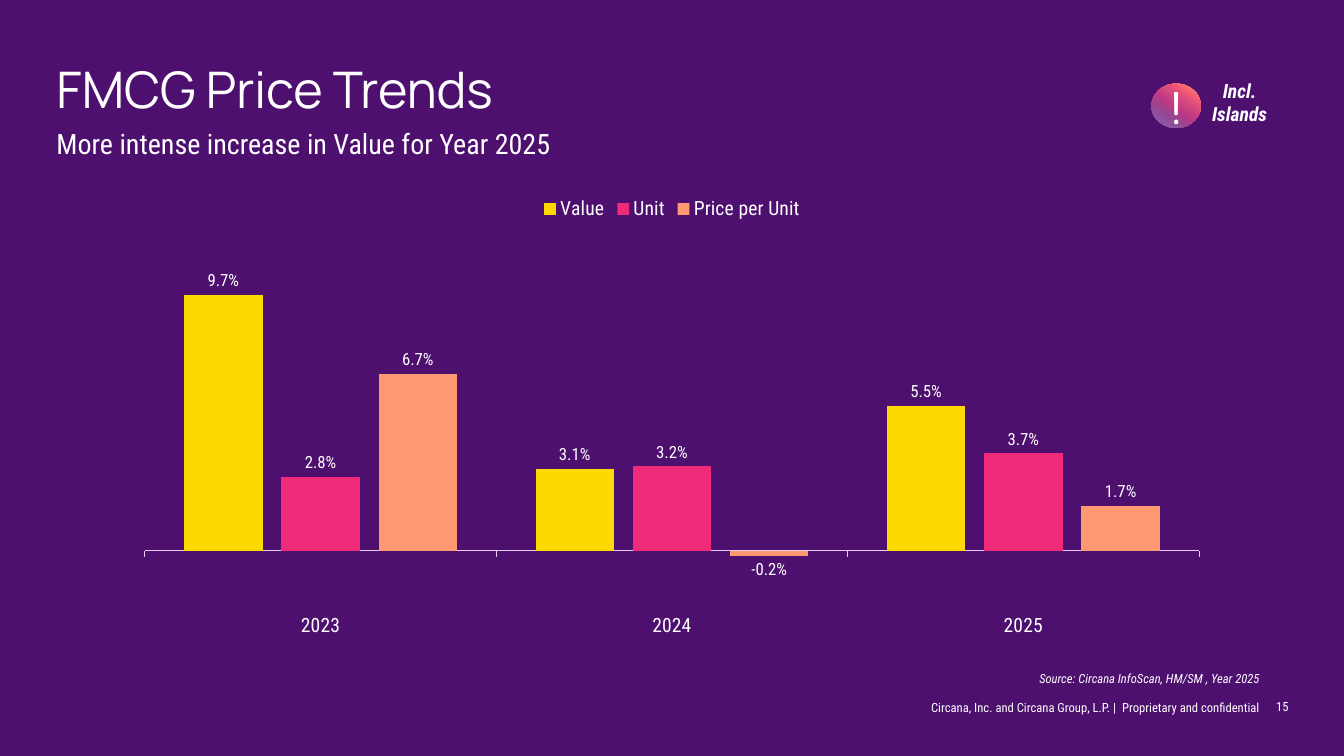
from lxml import etree
from pptx import Presentation
from pptx.chart.data import CategoryChartData
from pptx.dml.color import RGBColor
from pptx.enum.chart import XL_CHART_TYPE, XL_LEGEND_POSITION, XL_TICK_LABEL_POSITION, XL_TICK_MARK
from pptx.enum.shapes import MSO_SHAPE
from pptx.enum.text import MSO_ANCHOR, MSO_AUTO_SIZE, PP_ALIGN
from pptx.oxml.ns import qn
from pptx.util import Inches, Pt

LEFT, CENTER, RIGHT = PP_ALIGN.LEFT, PP_ALIGN.CENTER, PP_ALIGN.RIGHT
TOP, BOTTOM = MSO_ANCHOR.TOP, MSO_ANCHOR.BOTTOM
NO_AUTOFIT = MSO_AUTO_SIZE.NONE
OVAL = MSO_SHAPE.OVAL
CLUSTERED = XL_CHART_TYPE.COLUMN_CLUSTERED
LEGEND_TOP = XL_LEGEND_POSITION.TOP
LABELS_LOW = XL_TICK_LABEL_POSITION.LOW
TICK_OUT, TICK_NONE = XL_TICK_MARK.OUTSIDE, XL_TICK_MARK.NONE

PURPLE, WHITE, LILAC = "4E106F", "FFFFFF", "E9CDF8"
HEADING_FONT, BODY_FONT = "Manrope", "Roboto Condensed"
YEARS = ["2023", "2024", "2025"]
TRENDS = [
    ("Value", "FDD900", [0.097, 0.031, 0.055]),
    ("Unit", "EF2A79", [0.028, 0.032, 0.037]),
    ("Price per Unit", "FF9971", [0.067, -0.002, 0.017]),
]
BADGE_STOPS = [
    (5, "FF9971"), (21, "F75F75"), (35, "D94B7D"), (53, "BD3884"),
    (70, "964894"), (84, "8B57A8"), (95, "7A4C93"),
]


def color(hex_string):
    return RGBColor.from_string(hex_string)


def style_font(font, size, name=BODY_FONT, bold=False, italic=False):
    font.size = Pt(size)
    font.name = name
    font.bold = bold
    font.italic = italic
    font.color.rgb = color(WHITE)


def place(shape, left, top, width, height):
    shape.left, shape.top = Inches(left), Inches(top)
    shape.width, shape.height = Inches(width), Inches(height)


def write(shape, text, size, align=LEFT, anchor=TOP, inset=0, spacing=0.9, **font_format):
    frame = shape.text_frame
    frame.word_wrap = True
    frame.auto_size = NO_AUTOFIT
    frame.vertical_anchor = anchor
    frame.margin_left = frame.margin_right = Inches(inset)
    frame.margin_top = frame.margin_bottom = Inches(inset / 2)
    paragraph = frame.paragraphs[0]
    paragraph.text = text
    properties = paragraph._p.get_or_add_pPr()
    properties.set("marL", "0")
    properties.set("indent", "0")
    etree.SubElement(properties, qn("a:buNone"))
    paragraph.alignment = align
    paragraph.line_spacing = spacing
    paragraph.space_before = Pt(0)
    style_font(paragraph.runs[0].font, size, **font_format)


def fill_placeholder(placeholder, box, text, size, **text_format):
    place(placeholder, *box)
    write(placeholder, text, size, **text_format)


def add_text(slide, box, text, size, **text_format):
    label = slide.shapes.add_textbox(*map(Inches, box))
    write(label, text, size, **text_format)


def add_badge(slide, box):
    badge = slide.shapes.add_shape(OVAL, *map(Inches, box))
    badge.shadow.inherit = False
    badge.line.fill.background()
    badge.fill.gradient()
    badge.fill.gradient_angle = 360 - 124
    stop_list = badge._element.spPr.find(".//" + qn("a:gsLst"))
    for old_stop in list(stop_list):
        stop_list.remove(old_stop)
    for percent, hex_string in BADGE_STOPS:
        stop = etree.SubElement(stop_list, qn("a:gs"), pos=str(percent * 1000))
        etree.SubElement(stop, qn("a:srgbClr"), val=hex_string)


def add_trend_chart(slide, box):
    data = CategoryChartData(number_format="0.0%")
    data.categories = YEARS
    for name, _, values in TRENDS:
        data.add_series(name, values)
    chart = slide.shapes.add_chart(CLUSTERED, *map(Inches, box), data).chart
    style_font(chart.font, 12)
    chart.has_title = False
    chart.has_legend = True
    chart.legend.position = LEGEND_TOP
    chart.legend.include_in_layout = False
    style_font(chart.legend.font, 14)

    years_axis = chart.category_axis
    years_axis.tick_label_position = LABELS_LOW
    years_axis.major_tick_mark = TICK_OUT
    years_axis.minor_tick_mark = TICK_NONE
    years_axis.format.line.color.rgb = color(LILAC)
    years_axis.format.line.width = Pt(0.75)
    style_font(years_axis.tick_labels.font, 14)

    rate_axis = chart.value_axis
    rate_axis.visible = False
    rate_axis.has_major_gridlines = False
    rate_axis.minimum_scale, rate_axis.maximum_scale = -0.02, 0.12

    plot = chart.plots[0]
    plot.vary_by_categories = False
    plot.gap_width, plot.overlap = 100, -24
    for series, (_, hex_string, _) in zip(plot.series, TRENDS):
        series.invert_if_negative = False
        series.format.fill.solid()
        series.format.fill.fore_color.rgb = color(hex_string)
        labels = series.data_labels
        labels.show_value = True
        labels.number_format = "0.0%"
        labels.number_format_is_linked = False
        style_font(labels.font, 12)


def main():
    deck = Presentation()
    deck.slide_width, deck.slide_height = Inches(13.33), Inches(7.5)
    slide = deck.slides.add_slide(deck.slide_layouts[3])
    slide.background.fill.solid()
    slide.background.fill.fore_color.rgb = color(PURPLE)

    title, subtitle, source = slide.placeholders
    fill_placeholder(title, (0.56, 0.64, 12.23, 0.6), "FMCG Price Trends", 36, name=HEADING_FONT)
    fill_placeholder(subtitle, (0.56, 1.29, 12.23, 0.5),
                     "More intense increase in Value for Year 2025", 20)
    fill_placeholder(source, (7.14, 6.63, 5.35, 0.18),
                     "Source: Circana InfoScan, HM/SM , Year 2025", 9,
                     align=RIGHT, anchor=BOTTOM, italic=True)

    add_trend_chart(slide, (1.22, 1.84, 10.89, 4.58))

    add_badge(slide, (11.42, 0.83, 0.49, 0.44))
    add_text(slide, (11.47, 0.74, 0.39, 0.63), "!", 32, align=CENTER, inset=0.1, spacing=1.0)
    add_text(slide, (11.86, 0.73, 0.87, 0.57), "Incl. Islands", 14,
             align=CENTER, inset=0.1, spacing=1.0, bold=True, italic=True)

    add_text(slide, (8.29, 6.9, 4.2, 0.2),
             "Circana, Inc. and Circana Group, L.P. |  Proprietary and confidential", 9,
             align=RIGHT, anchor=BOTTOM)
    add_text(slide, (12.62, 6.9, 0.16, 0.18), "15", 9, align=RIGHT, anchor=BOTTOM, spacing=1.0)

    deck.save("out.pptx")


if __name__ == "__main__":
    main()
